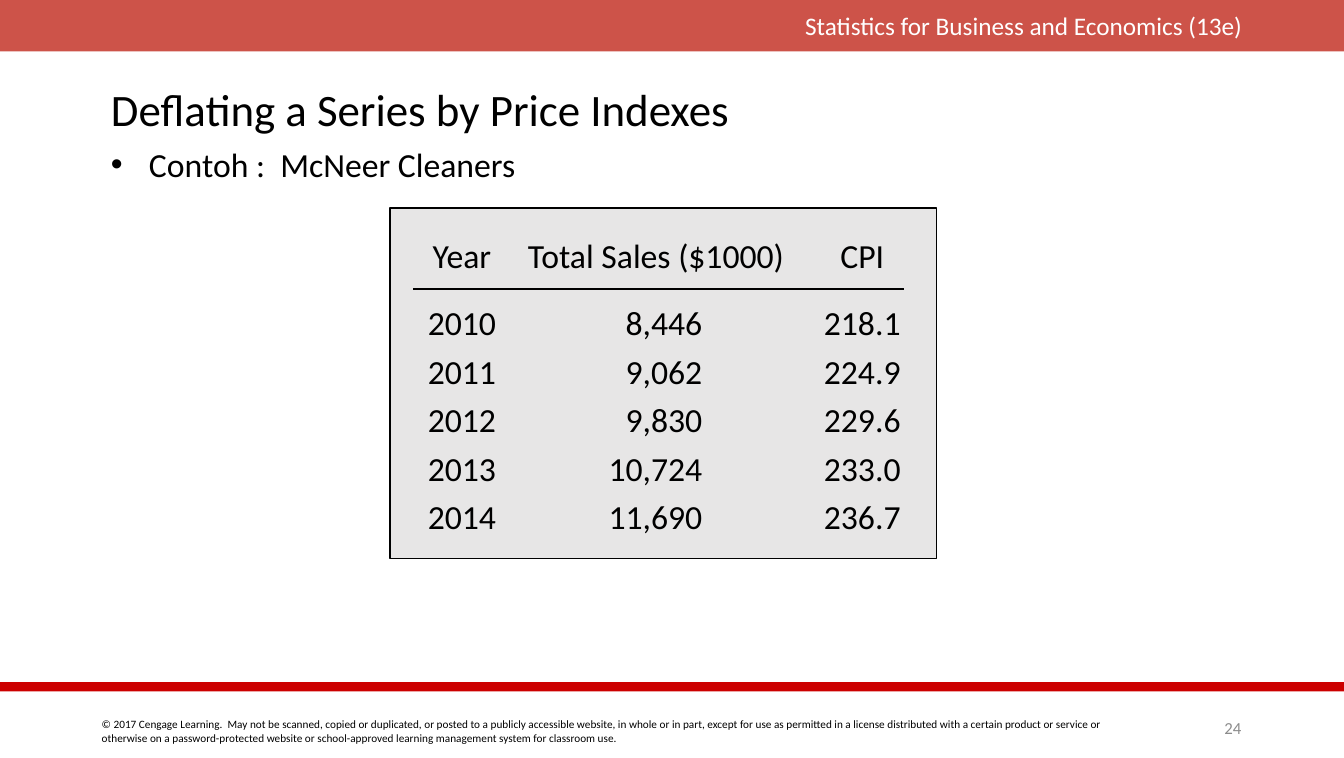
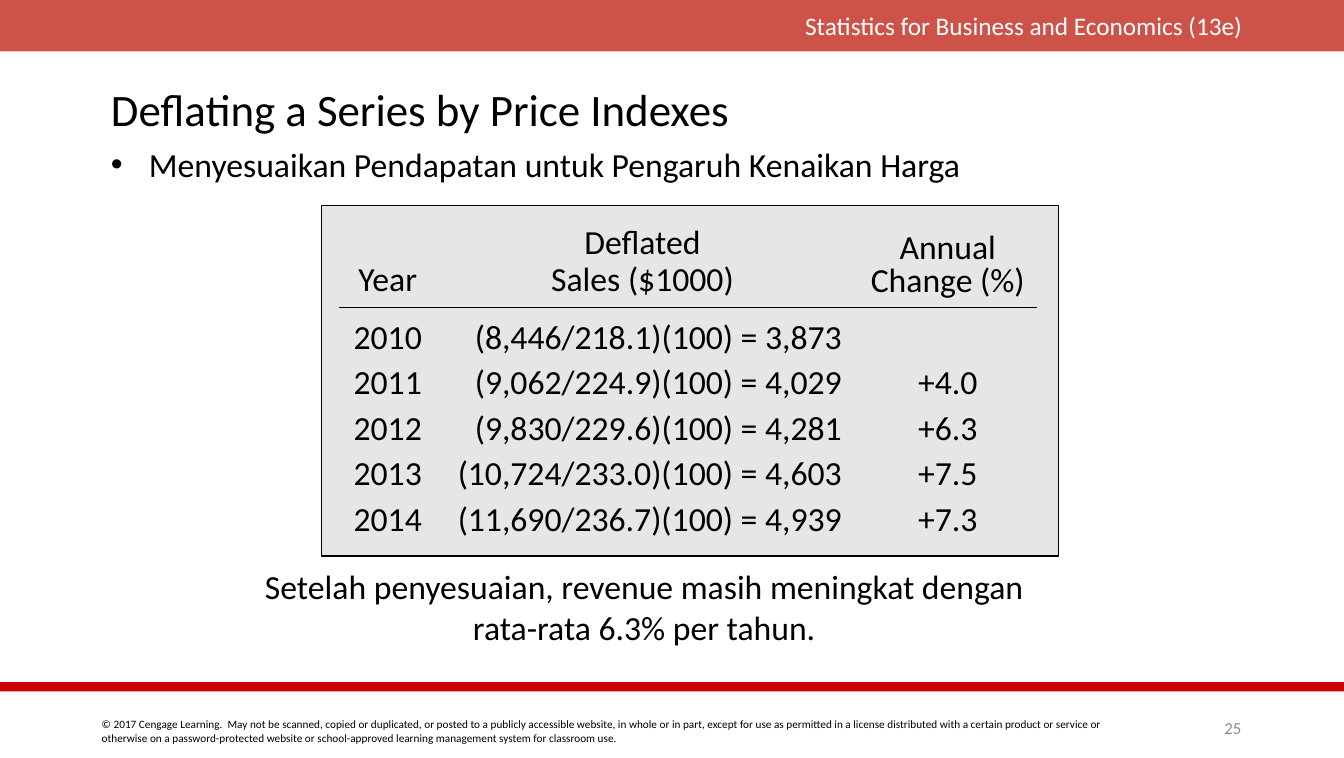
from dataclasses import dataclass

from lxml.etree import SubElement
from pptx import Presentation
from pptx.dml.color import RGBColor
from pptx.enum.shapes import MSO_CONNECTOR, MSO_SHAPE
from pptx.enum.text import MSO_ANCHOR, PP_ALIGN
from pptx.oxml.ns import qn
from pptx.util import Emu, Inches, Pt

# The page is a grid of square cells, twelve to the inch: 13.3 by 7.5 inches
COLUMNS, ROWS = 159.6, 90
CELL = Inches(1) / 12
FONT = "Calibri"
BODY_SIZE = 24
NO_STYLE = "{2D5ABB26-0587-4C30-8999-92F81FD0307C}"
COLORS = {
    "black": "000000",
    "white": "FFFFFF",
    "band": "BF2317",
    "stripe": "CC0000",
    "panel": "E7E6E6",
    "number": "8C8C8C",
}
BOOK = "Statistics for Business and Economics (13e)"
TITLE = "Deflating a Series by Price Indexes"
COPYRIGHT = (
    "© 2017 Cengage Learning.  May not be scanned, copied or duplicated, or posted to a "
    "publicly accessible website, in whole or in part, except for use as permitted in a "
    "license distributed with a certain product or service or otherwise on a "
    "password-protected website or school-approved learning management system for "
    "classroom use."
)


@dataclass(frozen=True)
class Frame:
    """A place on the grid, in columns and rows."""
    column: float
    row: float
    width: float
    height: float

    def lengths(self) -> tuple[Emu, Emu, Emu, Emu]:
        return (cells(self.column), cells(self.row), cells(self.width), cells(self.height))


@dataclass(frozen=True)
class TextStyle:
    size: int = BODY_SIZE
    color: str = "black"
    align: PP_ALIGN = PP_ALIGN.LEFT
    anchor: MSO_ANCHOR = MSO_ANCHOR.TOP
    spacing: float = 1.0


@dataclass(frozen=True)
class DataColumn:
    header: tuple[str, ...]
    values: tuple[str, ...]
    width: float
    align: PP_ALIGN = PP_ALIGN.CENTER
    right_margin: float = 0
    header_spacing: float = 0.9


@dataclass(frozen=True)
class DataPanel:
    frame: Frame
    rule_row: float
    rule_start: float
    rule_end: float
    header_height: float
    header_margin: float
    row_height: float
    columns: tuple[DataColumn, ...]


@dataclass(frozen=True)
class Lesson:
    number: int
    bullet: str
    panel: DataPanel
    note: str = ""


HEADING = TextStyle(size=32, anchor=MSO_ANCHOR.MIDDLE, spacing=0.9)
BODY = TextStyle()
NOTE = TextStyle(align=PP_ALIGN.CENTER)
BOOK_NAME = TextStyle(size=18, color="white", align=PP_ALIGN.RIGHT)
LEGAL = TextStyle(size=8)
PAGE_NUMBER = TextStyle(12, "number", PP_ALIGN.RIGHT, MSO_ANCHOR.MIDDLE)

YEARS = DataColumn(("Year",), ("2010", "2011", "2012", "2013", "2014"), 11.5)

LESSONS = (
    Lesson(
        24,
        "Contoh :  McNeer Cleaners",
        DataPanel(
            Frame(46.3, 24.7, 64.9, 41.6), 34.3, 49.1, 107.4, 10.9, 2.9, 5.76,
            (
                YEARS,
                DataColumn(
                    ("Total Sales ($1000)",),
                    ("8,446", "9,062", "9,830", "10,724", "11,690"),
                    34.6, PP_ALIGN.RIGHT, 11.8,
                ),
                DataColumn(("CPI",), ("218.1", "224.9", "229.6", "233.0", "236.7"), 14.4),
            ),
        ),
    ),
    Lesson(
        25,
        "Menyesuaikan Pendapatan untuk Pengaruh Kenaikan Harga",
        DataPanel(
            Frame(38.2, 24.4, 87.5, 41.6), 36.5, 40.3, 123.1, 13, 1.9, 5.4,
            (
                YEARS,
                DataColumn(
                    ("Deflated", "Sales ($1000)"),
                    (
                        "(8,446/218.1)(100) = 3,873",
                        "(9,062/224.9)(100) = 4,029",
                        "(9,830/229.6)(100) = 4,281",
                        "(10,724/233.0)(100) = 4,603",
                        "(11,690/236.7)(100) = 4,939",
                    ),
                    49, PP_ALIGN.RIGHT, 0.8,
                ),
                DataColumn(
                    ("Annual", "Change (%)"),
                    ("", "+4.0", "+6.3", "+7.5", "+7.3"),
                    23.5, header_spacing=0.8,
                ),
            ),
        ),
        "Setelah penyesuaian, revenue masih meningkat dengan rata-rata 6.3% per tahun.",
    ),
)


def cells(count: float) -> Emu:
    return Emu(round(count * CELL))


def rgb(name: str) -> RGBColor:
    return RGBColor.from_string(COLORS[name])


def write(text_frame, lines: tuple[str, ...], style: TextStyle) -> None:
    """Write one paragraph for each line."""
    for index, line in enumerate(lines):
        para = text_frame.paragraphs[0] if index == 0 else text_frame.add_paragraph()
        para.alignment = style.align
        para.line_spacing = style.spacing
        if line:
            span = para.add_run()
            span.text = line
            span.font.name = FONT
            span.font.size = Pt(style.size)
            span.font.color.rgb = rgb(style.color)


def add_text(page, frame: Frame, text: str, style: TextStyle):
    box = page.shapes.add_textbox(*frame.lengths())
    box.text_frame.word_wrap = True
    box.text_frame.vertical_anchor = style.anchor
    write(box.text_frame, (text,), style)
    return box


def add_bullet(page, frame: Frame, text: str) -> None:
    box = add_text(page, frame, text, BODY)
    properties = box.text_frame.paragraphs[0]._p.get_or_add_pPr()
    indent = cells(4.5)
    properties.set("marL", str(indent))
    properties.set("indent", str(-indent))
    SubElement(properties, qn("a:buFont")).set("typeface", "Arial")
    SubElement(properties, qn("a:buChar")).set("char", "•")


def add_block(page, frame: Frame, color: str, outlined: bool = False):
    block = page.shapes.add_shape(MSO_SHAPE.RECTANGLE, *frame.lengths())
    block.shadow.inherit = False
    block.fill.solid()
    block.fill.fore_color.rgb = rgb(color)
    if outlined:
        block.line.color.rgb = rgb("black")
        block.line.width = Pt(1)
    else:
        block.line.fill.background()
    return block


def add_rule(page, panel: DataPanel) -> None:
    height = cells(panel.rule_row)
    rule = page.shapes.add_connector(
        MSO_CONNECTOR.STRAIGHT, cells(panel.rule_start), height, cells(panel.rule_end), height
    )
    rule.line.color.rgb = rgb("black")
    rule.line.width = Pt(1)
    SubElement(rule._element.spPr, qn("a:effectLst"))


def fill_cell(cell, lines: tuple[str, ...], style: TextStyle,
              right: float = 0, bottom: float = 0) -> None:
    cell.fill.background()
    cell.margin_left = cell.margin_top = 0
    cell.margin_right, cell.margin_bottom = cells(right), cells(bottom)
    cell.vertical_anchor = style.anchor
    write(cell.text_frame, lines, style)


def add_data_panel(page, panel: DataPanel) -> None:
    """Draw the grey panel, its table and the rule below the header."""
    add_block(page, panel.frame, "panel", outlined=True)
    row_count = len(YEARS.values)
    frame = Frame(
        panel.rule_start,
        panel.frame.row,
        sum(column.width for column in panel.columns),
        panel.header_height + row_count * panel.row_height,
    )
    holder = page.shapes.add_table(row_count + 1, len(panel.columns), *frame.lengths())
    table = holder.table
    table.first_row = table.horz_banding = False
    next(holder._element.iter(qn("a:tableStyleId"))).text = NO_STYLE
    for index, row in enumerate(table.rows):
        row.height = cells(panel.row_height if index else panel.header_height)
    for index, column in enumerate(panel.columns):
        table.columns[index].width = cells(column.width)
        header_style = TextStyle(
            align=PP_ALIGN.CENTER, anchor=MSO_ANCHOR.BOTTOM, spacing=column.header_spacing
        )
        fill_cell(table.cell(0, index), column.header, header_style, bottom=panel.header_margin)
        value_style = TextStyle(align=column.align, anchor=MSO_ANCHOR.MIDDLE)
        for row_index, value in enumerate(column.values, start=1):
            fill_cell(table.cell(row_index, index), (value,), value_style, column.right_margin)
    add_rule(page, panel)


def add_page_frame(page, number: int) -> None:
    """Draw the band, title and footer that every page shares."""
    band = add_block(page, Frame(0, 0, COLUMNS, 6.1), "band")
    color = next(band._element.spPr.iter(qn("a:srgbClr")))
    SubElement(color, qn("a:alpha")).set("val", "78000")
    add_text(page, Frame(79.8, 0.6, 68.9, 4.8), BOOK, BOOK_NAME)
    add_text(page, Frame(12, 9.1, 135.7, 8.4), TITLE, HEADING)
    add_block(page, Frame(0, 0.9 * ROWS, COLUMNS, 1.1), "stripe")
    add_text(page, Frame(10.9, 84.6, 123.6, 4.4), COPYRIGHT, LEGAL)
    add_text(page, Frame(140.4, 84.6, 8.2, 3.6), str(number), PAGE_NUMBER)


def add_lesson(deck, lesson: Lesson) -> None:
    page = deck.slides.add_slide(deck.slide_layouts[6])
    add_page_frame(page, lesson.number)
    add_bullet(page, Frame(12, 16.5, 135.7, 7), lesson.bullet)
    add_data_panel(page, lesson.panel)
    if lesson.note:
        add_text(page, Frame(30, 66.6, 93, 10.9), lesson.note, NOTE)


def main() -> None:
    deck = Presentation()
    deck.slide_width, deck.slide_height = cells(COLUMNS), cells(ROWS)
    for lesson in LESSONS:
        add_lesson(deck, lesson)
    deck.save("out.pptx")


if __name__ == "__main__":
    main()
